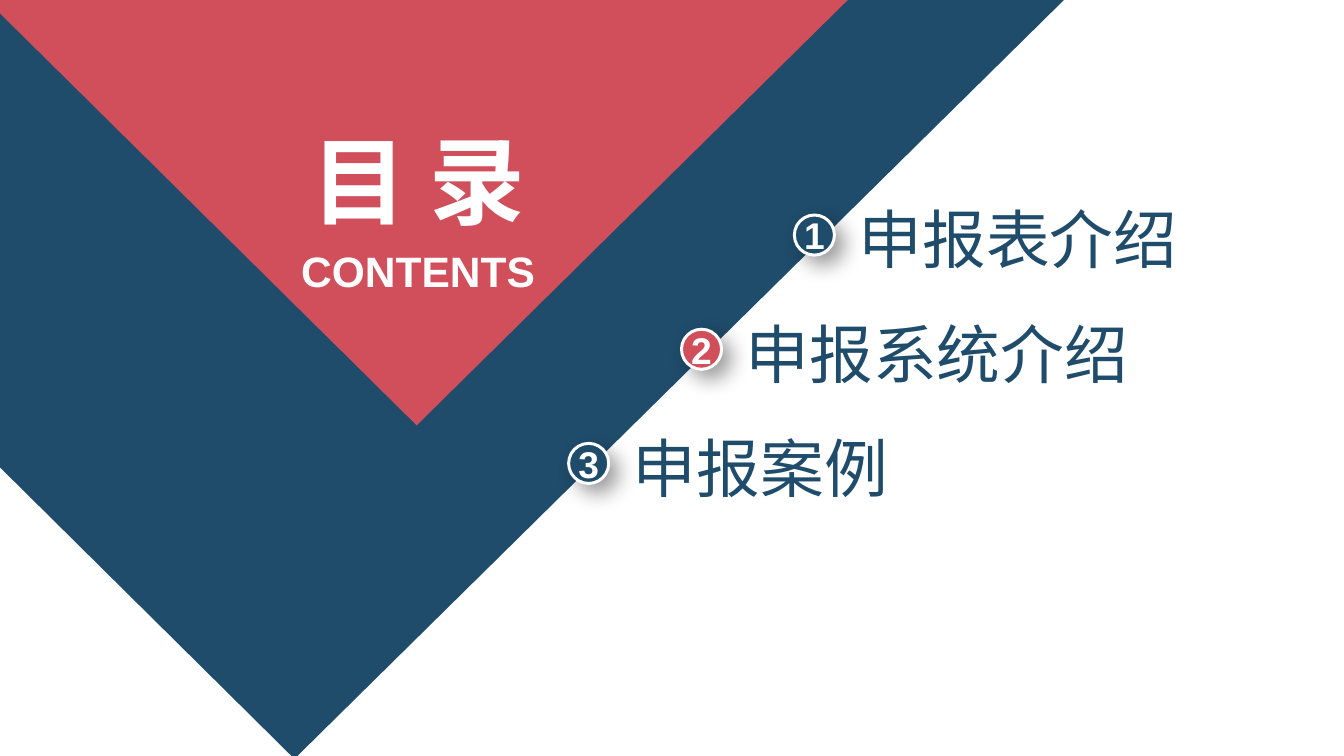
from lxml.etree import SubElement
from pptx import Presentation
from pptx.dml.color import RGBColor
from pptx.enum.shapes import MSO_SHAPE
from pptx.enum.text import MSO_ANCHOR, MSO_AUTO_SIZE, PP_ALIGN
from pptx.oxml.ns import qn
from pptx.util import Pt

COLORS = {"navy": "1F4C6B", "red": "D14E5B", "white": "FFFFFF", "shadow": "000000"}
FONT = "Arial"
SLIDE_SIZE = (1012.32, 569.52)

TITLE = "目 录"
SUBTITLE = "CONTENTS"
CHAPTERS = [
    ("申报表介绍", "navy", 253.5),
    ("申报系统介绍", "red", 296),
    ("申报案例", "navy", 437),
]
WEDGES = [
    ("navy", [(0, 0), (801.4, 0), (221.8, 571.7), (0, 352.1)]),
    ("red", [(0, 0), (638.6, 0), (313.9, 320.4), (0, 10.1)]),
]

FIRST_BADGE = (598.3, 162)
BADGE_STEP = (-85, 86)
BADGE_SIZE = 30.2
LABEL_OFFSET = (48.5, -11.5)
LABEL_HEIGHT = 58.3


def color(name):
    return RGBColor.from_string(COLORS[name])


def write(shape, text, size, color_name, bold=False, align=PP_ALIGN.CENTER,
          anchor=MSO_ANCHOR.MIDDLE):
    frame = shape.text_frame
    frame.auto_size = MSO_AUTO_SIZE.NONE
    frame.word_wrap = True
    frame.vertical_anchor = anchor
    frame.margin_left = frame.margin_right = 0
    frame.margin_top = frame.margin_bottom = 0
    paragraph = frame.paragraphs[0]
    paragraph.text = text
    paragraph.alignment = align
    font = paragraph.font
    font.name, font.size, font.bold = FONT, Pt(size), bold
    font.color.rgb = color(color_name)


def fill_plain(shape, color_name):
    shape.shadow.inherit = False
    shape.fill.solid()
    shape.fill.fore_color.rgb = color(color_name)


def add_wedge(slide, color_name, points):
    corners = [(Pt(x), Pt(y)) for x, y in points]
    builder = slide.shapes.build_freeform(*corners[0])
    builder.add_line_segments(corners[1:], close=True)
    wedge = builder.convert_to_shape()
    fill_plain(wedge, color_name)
    wedge.line.fill.background()


def add_drop_shadow(shape):
    effects = shape.element.spPr.find(qn("a:effectLst"))
    shadow = SubElement(effects, qn("a:outerShdw"), blurRad=str(Pt(16)), dist=str(Pt(9)),
                        dir=str(45 * 60000), algn="tl", rotWithShape="0")
    tint = SubElement(shadow, qn("a:srgbClr"), val=COLORS["shadow"])
    SubElement(tint, qn("a:alpha"), val="40000")


def add_chapter(slide, index, text, color_name, width):
    left, top = (start + index * step for start, step in zip(FIRST_BADGE, BADGE_STEP))
    badge = slide.shapes.add_shape(MSO_SHAPE.OVAL, Pt(left), Pt(top),
                                   Pt(BADGE_SIZE), Pt(BADGE_SIZE))
    fill_plain(badge, color_name)
    add_drop_shadow(badge)
    badge.line.color.rgb = color("white")
    badge.line.width = Pt(2.25)
    write(badge, str(index + 1), 28, "white", bold=True)

    label = slide.shapes.add_textbox(Pt(left + LABEL_OFFSET[0]), Pt(top + LABEL_OFFSET[1]),
                                     Pt(width), Pt(LABEL_HEIGHT))
    write(label, text, 48, "navy", align=PP_ALIGN.LEFT)


def add_heading(slide):
    title = slide.shapes.title
    title.left, title.top, title.width, title.height = Pt(211.7), Pt(91.4), Pt(206.6), Pt(87.1)
    write(title, TITLE, 72, "white", bold=True)
    title.element.getparent().append(title.element)
    subtitle = slide.shapes.add_textbox(Pt(223.2), Pt(184.3), Pt(183.6), Pt(38.9))
    write(subtitle, SUBTITLE, 32, "white", bold=True, anchor=MSO_ANCHOR.TOP)


def main():
    """Build the contents slide."""
    presentation = Presentation()
    presentation.slide_width, presentation.slide_height = map(Pt, SLIDE_SIZE)
    slide = presentation.slides.add_slide(presentation.slide_layouts[5])
    for color_name, points in WEDGES:
        add_wedge(slide, color_name, points)
    for index, chapter in enumerate(CHAPTERS):
        add_chapter(slide, index, *chapter)
    add_heading(slide)
    presentation.save("out.pptx")


if __name__ == "__main__":
    main()
